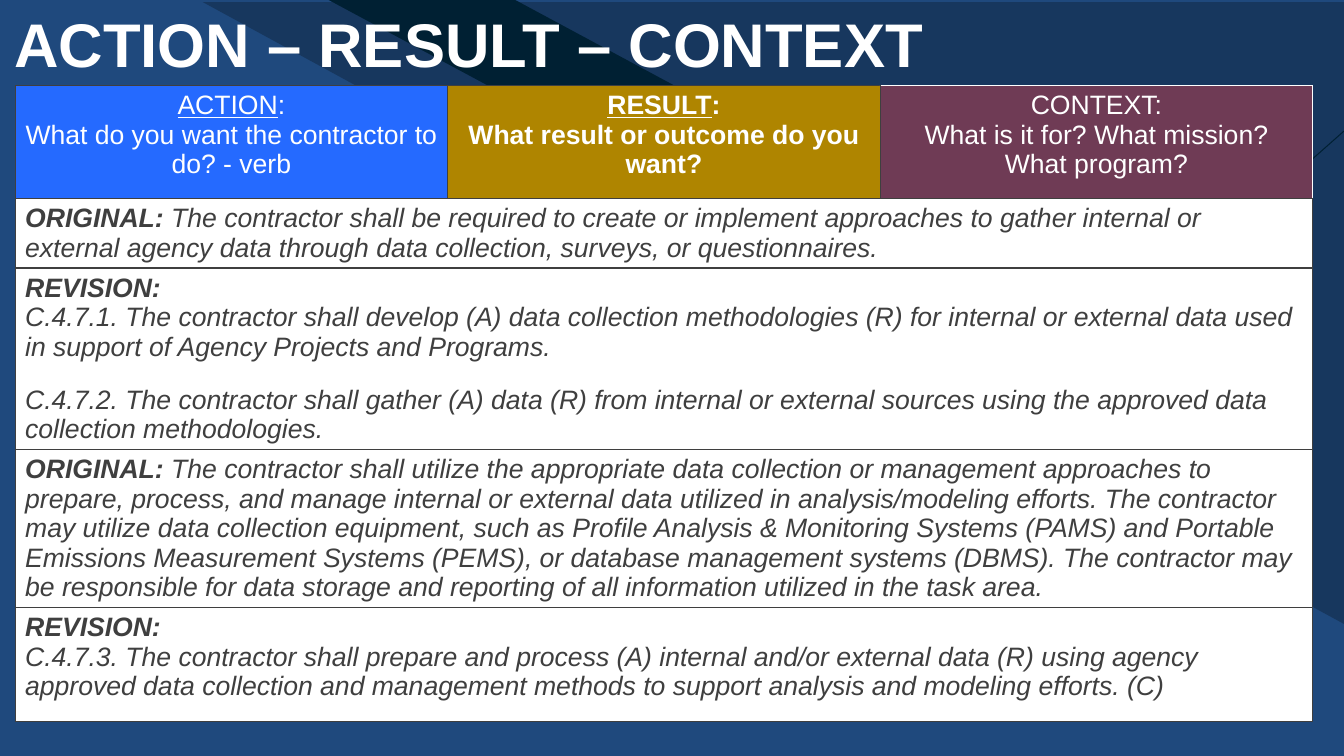
from dataclasses import dataclass

from lxml.etree import SubElement
from pptx import Presentation
from pptx.dml.color import RGBColor
from pptx.enum.shapes import MSO_CONNECTOR, MSO_SHAPE
from pptx.enum.text import MSO_ANCHOR, MSO_AUTO_SIZE, PP_ALIGN
from pptx.oxml.ns import qn
from pptx.slide import Slide
from pptx.table import Table, _Cell
from pptx.util import Emu, Pt

PX = 9144
FONT = "Arial"
BLUE = RGBColor(0x1F, 0x49, 0x7D)
NAVY = RGBColor(0x17, 0x37, 0x5E)
MIDNIGHT = RGBColor(0x00, 0x20, 0x33)
WHITE = RGBColor(0xFF, 0xFF, 0xFF)
CHARCOAL = RGBColor(0x3F, 0x3F, 0x3F)
AZURE = RGBColor(0x25, 0x6A, 0xFF)
GOLD = RGBColor(0xAF, 0x85, 0x00)
PLUM = RGBColor(0x6F, 0x3B, 0x55)
TEXT_SIZE = Pt(19)
CLAUSE_GAP = Pt(16.8)
COLUMN_WIDTH = 429
HEADING_HEIGHT = 112


@dataclass(frozen=True)
class Heading:
    word: str
    question: str
    fill: RGBColor
    outer_line: RGBColor = CHARCOAL
    bold: bool = False
    underlined: bool = True


@dataclass(frozen=True)
class Statement:
    label: str
    clauses: tuple[str, ...]
    height: int
    inline: bool = False


@dataclass(frozen=True)
class Backdrop:
    preset: MSO_SHAPE
    box: tuple[int, int, int, int]
    fill: RGBColor
    rotation: int = 0
    slant: float | None = None


BACKDROPS = (
    Backdrop(MSO_SHAPE.RIGHT_TRIANGLE, (201, 2, 1132, 617), NAVY, rotation=180),
    Backdrop(MSO_SHAPE.PARALLELOGRAM, (326, 0, 451, 143), MIDNIGHT, slant=1.86),
)
HEADINGS = (
    Heading("ACTION", "What do you want the contractor to do? - verb", AZURE),
    Heading("RESULT", "What result or outcome do you want?", GOLD, bold=True),
    Heading("CONTEXT", "What is it for? What mission? What program?", PLUM,
            outer_line=WHITE, underlined=False),
)
STATEMENTS = (
    Statement("ORIGINAL:", (
        "The contractor shall be required to create or implement approaches to gather "
        "internal or external agency data through data collection, surveys, or "
        "questionnaires.",), 69, inline=True),
    Statement("REVISION:", (
        "C.4.7.1. The contractor shall develop (A) data collection methodologies (R) for "
        "internal or external data used in support of Agency Projects and Programs.",
        "C.4.7.2. The contractor shall gather (A) data (R) from internal or external "
        "sources using the approved data collection methodologies."), 180),
    Statement("ORIGINAL:", (
        "The contractor shall utilize the appropriate data collection or management "
        "approaches to prepare, process, and manage internal or external data utilized in "
        "analysis/modeling efforts. The contractor may utilize data collection equipment, "
        "such as Profile Analysis & Monitoring Systems (PAMS) and Portable Emissions "
        "Measurement Systems (PEMS), or database management systems (DBMS). The contractor "
        "may be responsible for data storage and reporting of all information utilized in "
        "the task area.",), 157, inline=True),
    Statement("REVISION:", (
        "C.4.7.3. The contractor shall prepare and process (A) internal and/or external "
        "data (R) using agency approved data collection and management methods to support "
        "analysis and modeling efforts. (C)",), 113),
)


def px(length: int) -> Emu:
    return Emu(length * PX)


def add_backdrop(slide: Slide, backdrop: Backdrop) -> None:
    panel = slide.shapes.add_shape(backdrop.preset, *map(px, backdrop.box))
    panel.shadow.inherit = False
    panel.fill.solid()
    panel.fill.fore_color.rgb = backdrop.fill
    panel.line.fill.background()
    panel.rotation = backdrop.rotation
    if backdrop.slant is not None:
        panel.adjustments[0] = backdrop.slant
        panel._element.spPr.find(qn("a:xfrm")).set("flipH", "1")


def add_ray(slide: Slide) -> None:
    ray = slide.shapes.add_connector(
        MSO_CONNECTOR.STRAIGHT, px(1132), px(308), px(1333), px(130))
    ray.line.color.rgb = MIDNIGHT
    ray.line.width = Pt(0.75)
    SubElement(ray._element.spPr, qn("a:effectLst"))


def paint_cell(cell: _Cell, fill: RGBColor, outer_line: RGBColor = CHARCOAL) -> None:
    properties = cell._tc.get_or_add_tcPr()
    sides = {"lnL": CHARCOAL, "lnR": outer_line, "lnT": outer_line, "lnB": CHARCOAL}
    for side, color in sides.items():
        border = SubElement(properties, qn(f"a:{side}"), w=str(Pt(1)))
        solid = SubElement(border, qn("a:solidFill"))
        SubElement(solid, qn("a:srgbClr"), val=str(color))
    cell.fill.solid()
    cell.fill.fore_color.rgb = fill


def fill_heading(cell: _Cell, heading: Heading) -> None:
    paint_cell(cell, heading.fill, heading.outer_line)
    name = cell.text_frame.paragraphs[0]
    word = name.add_run()
    word.text = heading.word
    word.font.underline = heading.underlined
    name.add_run().text = ":"
    question = cell.text_frame.add_paragraph()
    question.text = heading.question
    for paragraph in (name, question):
        paragraph.alignment = PP_ALIGN.CENTER
        paragraph.font.name = FONT
        paragraph.font.size = TEXT_SIZE
        paragraph.font.bold = heading.bold
        paragraph.font.color.rgb = WHITE


def fill_statement(table: Table, row: int, statement: Statement) -> None:
    for cell in table.rows[row].cells:
        paint_cell(cell, WHITE)
    wide = table.cell(row, 0)
    wide.merge(table.cell(row, len(HEADINGS) - 1))
    frame = wide.text_frame
    label = frame.paragraphs[0].add_run()
    label.text = statement.label + (" " if statement.inline else "")
    label.font.bold = True
    for index, clause in enumerate(statement.clauses):
        paragraph = frame.paragraphs[0] if statement.inline else frame.add_paragraph()
        if index:
            paragraph.space_before = CLAUSE_GAP
        body = paragraph.add_run()
        body.text = clause
        body.font.bold = False
    for paragraph in frame.paragraphs:
        paragraph.font.name = FONT
        paragraph.font.size = TEXT_SIZE
        paragraph.font.italic = True
        paragraph.font.color.rgb = CHARCOAL


def add_comparison(slide: Slide) -> None:
    heights = [HEADING_HEIGHT] + [statement.height for statement in STATEMENTS]
    table = slide.shapes.add_table(
        len(heights), len(HEADINGS), px(15), px(85),
        px(COLUMN_WIDTH * len(HEADINGS)), px(sum(heights))).table
    table.horz_banding = False
    for column in table.columns:
        column.width = px(COLUMN_WIDTH)
    for row, height in zip(table.rows, heights):
        row.height = px(height)
    for index, heading in enumerate(HEADINGS):
        fill_heading(table.cell(0, index), heading)
    for row, statement in enumerate(STATEMENTS, start=1):
        fill_statement(table, row, statement)


def set_title(slide: Slide) -> None:
    title = slide.shapes.title
    title.left, title.top, title.width, title.height = map(px, (1, 1, 1242, 84))
    frame = title.text_frame
    frame.text = "ACTION – RESULT – CONTEXT"
    frame.auto_size = MSO_AUTO_SIZE.NONE
    frame.vertical_anchor = MSO_ANCHOR.TOP
    frame.margin_left = frame.margin_right = px(13)
    frame.margin_top = frame.margin_bottom = px(13)
    heading = frame.paragraphs[0]
    heading.alignment = PP_ALIGN.LEFT
    heading.line_spacing = 0.9
    heading.font.name = FONT
    heading.font.size = Pt(44)
    heading.font.bold = True
    heading.font.color.rgb = WHITE
    slide.shapes._spTree.append(title._element)


def main() -> None:
    deck = Presentation()
    deck.slide_width, deck.slide_height = px(1333), px(750)
    slide = deck.slides.add_slide(deck.slide_layouts[5])
    slide.background.fill.solid()
    slide.background.fill.fore_color.rgb = BLUE
    for backdrop in BACKDROPS:
        add_backdrop(slide, backdrop)
    add_ray(slide)
    add_comparison(slide)
    set_title(slide)
    deck.save("out.pptx")


if __name__ == "__main__":
    main()
